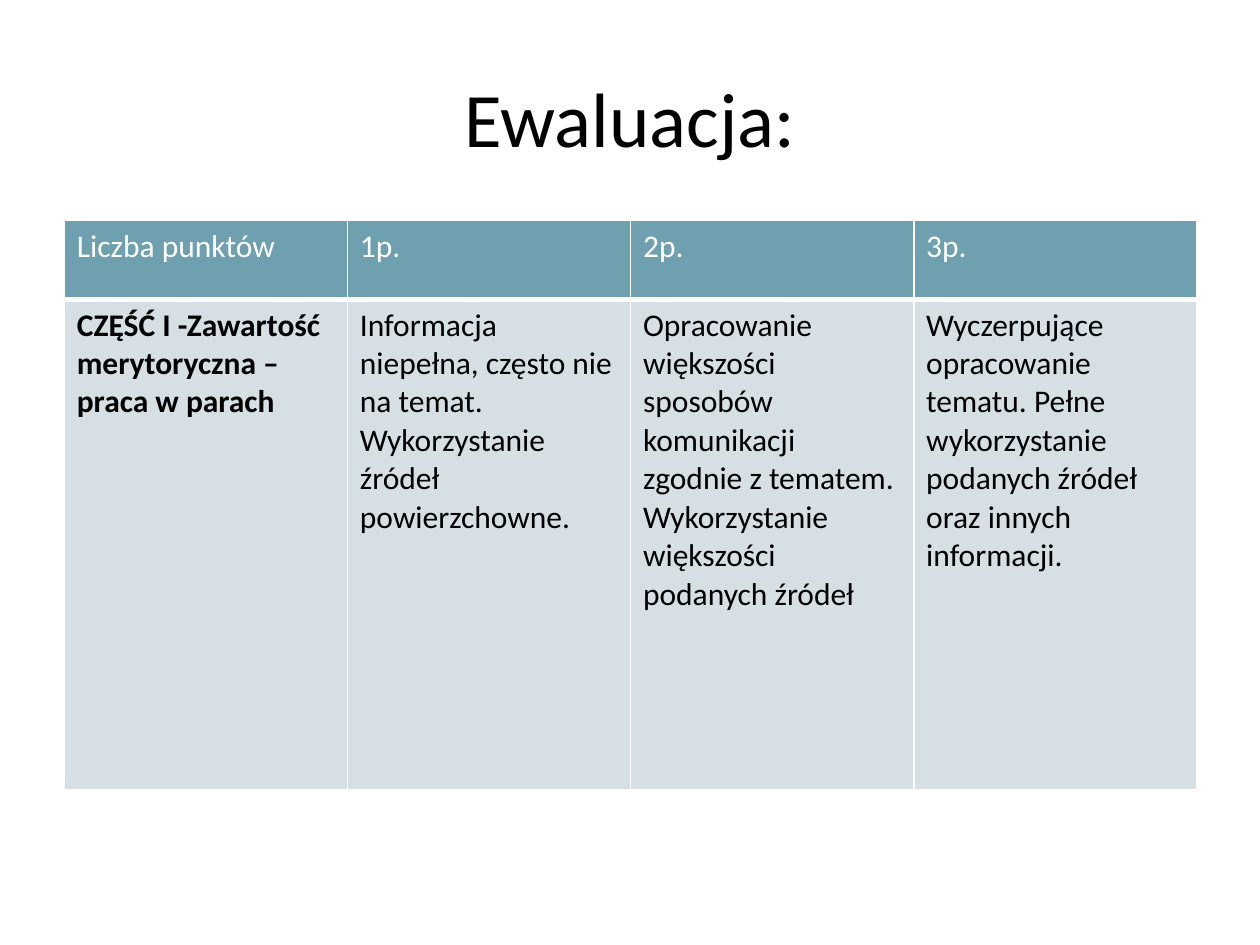
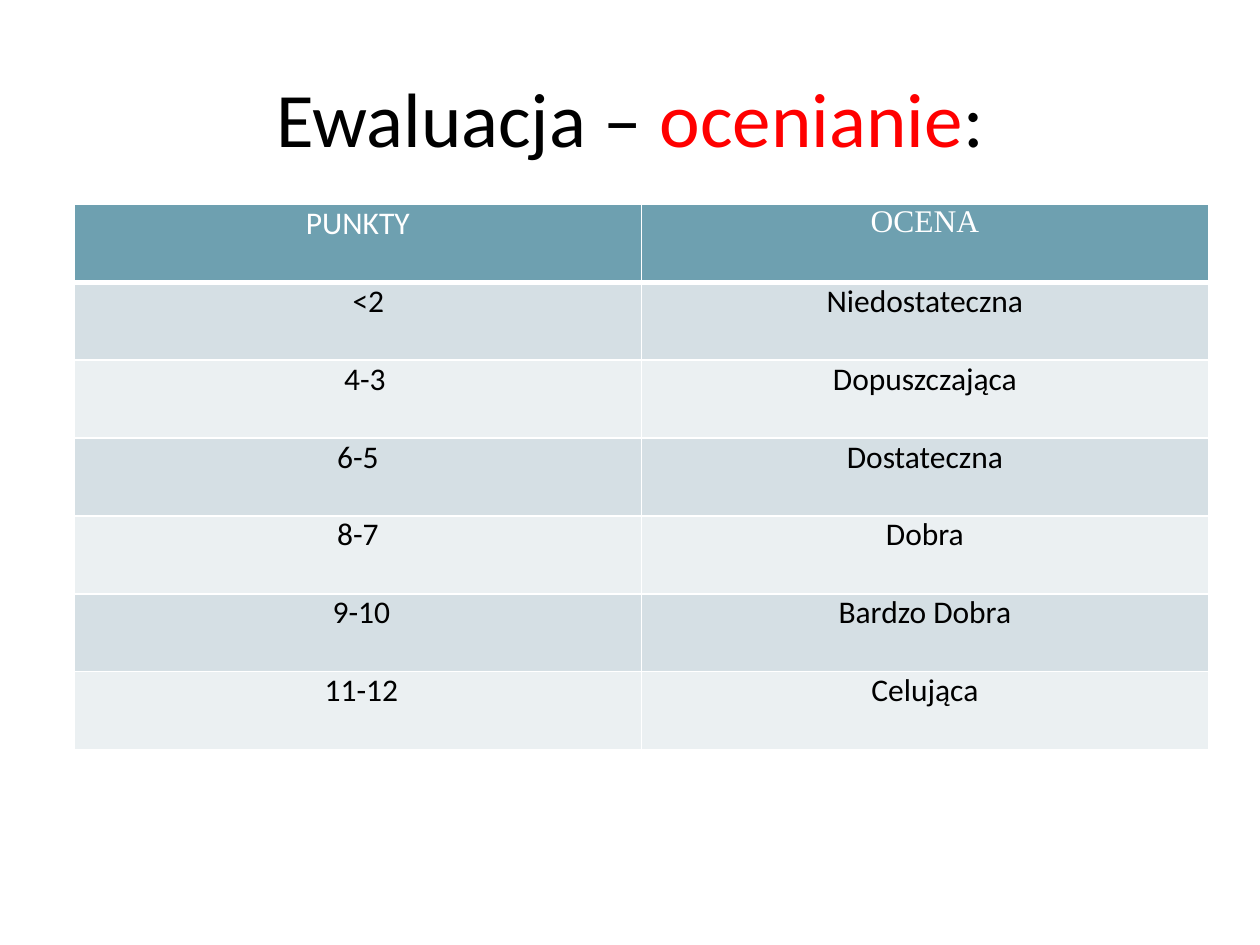
"""Build two evaluation slides, each a title above a banded table."""
from lxml import etree
from pptx import Presentation
from pptx.dml.color import RGBColor
from pptx.enum.text import MSO_ANCHOR, PP_ALIGN
from pptx.oxml.ns import qn
from pptx.util import Cm, Pt

LEFT, CENTER, MIDDLE = PP_ALIGN.LEFT, PP_ALIGN.CENTER, MSO_ANCHOR.MIDDLE
BLACK = RGBColor(0x00, 0x00, 0x00)
WHITE = RGBColor(0xFF, 0xFF, 0xFF)
RED = RGBColor(0xFF, 0x00, 0x00)
TEAL = RGBColor(0x6E, 0xA0, 0xB0)
BANDS = RGBColor(0xD5, 0xDF, 0xE4), RGBColor(0xEB, 0xF0, 0xF2)
SANS, SERIF = "Calibri", "Times New Roman"

CRITERIA = {
    "title": [("Ewaluacja:", BLACK)],
    "rows": [
        ("Liczba punktów", "1p.", "2p.", "3p."),
        ("CZĘŚĆ I -Zawartość merytoryczna –\npraca w parach",
         "Informacja niepełna, często nie na temat. Wykorzystanie źródeł powierzchowne.",
         "Opracowanie większości sposobów komunikacji zgodnie z tematem. "
         "Wykorzystanie większości podanych źródeł",
         "Wyczerpujące opracowanie tematu. Pełne wykorzystanie podanych źródeł "
         "oraz innych informacji."),
    ],
    "place": (1.3, 4.45, 22.83),
    "heights": [1.59, 9.89],
    "align": LEFT,
    "margins": (0.25, 0.13),
    "bold_cells": {(1, 0)},
}
GRADES = {
    "title": [("Ewaluacja – ", BLACK), ("ocenianie", RED), (":", BLACK)],
    "rows": [
        ("PUNKTY", "OCENA"),
        ("<2", "Niedostateczna"),
        ("4-3", "Dopuszczająca"),
        ("6-5", "Dostateczna"),
        ("8-7", "Dobra"),
        ("9-10", "Bardzo Dobra"),
        ("11-12", "Celująca"),
    ],
    "place": (1.5, 4.12, 22.86),
    "heights": [1.57] * 7,
    "align": CENTER,
    "margins": (0.18, 0),
    "serif_cells": {(0, 1)},
    "indents": {(1, 0): 0.42, (2, 0): 0.28, (5, 0): 0.14, (6, 0): 0.14},
}


def apply(target, values):
    for name, value in values.items():
        setattr(target, name, value)


def style_font(font, size, color, name=SANS, bold=False):
    apply(font, {"size": Pt(size), "name": name, "bold": bold})
    font.color.rgb = color


def add_title(page, parts):
    box = page.shapes.add_textbox(Cm(1.27), Cm(0.76), Cm(22.86), Cm(3.18))
    frame = box.text_frame
    apply(frame, {"word_wrap": True, "vertical_anchor": MIDDLE})
    para = frame.paragraphs[0]
    para.alignment = CENTER
    for text, color in parts:
        span = para.add_run()
        span.text = text
        style_font(span.font, 44, color)


def add_borders(cell, bottom):
    properties = cell._tc.get_or_add_tcPr()
    for side, width in (("L", 1), ("R", 1), ("T", 1), ("B", bottom)):
        line = etree.SubElement(properties, qn(f"a:ln{side}"), w=str(Pt(width)))
        fill = etree.SubElement(line, qn("a:solidFill"))
        etree.SubElement(fill, qn("a:srgbClr"), val=str(WHITE))


def fill_cell(cell, spot, text, content):
    header = spot[0] == 0
    side, edge = content["margins"]
    indent = content.get("indents", {}).get(spot, 0)
    apply(cell, {"text": text, "margin_left": Cm(side + indent), "margin_right": Cm(side),
                 "margin_top": Cm(edge), "margin_bottom": Cm(edge)})
    add_borders(cell, 3 if header else 1)
    cell.fill.solid()
    cell.fill.fore_color.rgb = TEAL if header else BANDS[(spot[0] - 1) % 2]
    name = SERIF if spot in content.get("serif_cells", ()) else SANS
    bold = spot in content.get("bold_cells", ())
    for para in cell.text_frame.paragraphs:
        para.alignment = content["align"]
        for span in para.runs:
            style_font(span.font, 18, WHITE if header else BLACK, name, bold)


def add_grid(page, content):
    rows, heights = content["rows"], content["heights"]
    left, top, width = content["place"]
    columns = len(rows[0])
    table = page.shapes.add_table(len(rows), columns, Cm(left), Cm(top),
                                  Cm(width), Cm(sum(heights))).table
    for column in table.columns:
        column.width = Cm(width / columns)
    for row, (texts, height) in enumerate(zip(rows, heights)):
        table.rows[row].height = Cm(height)
        for column, text in enumerate(texts):
            fill_cell(table.cell(row, column), (row, column), text, content)


def main():
    deck = Presentation()
    apply(deck, {"slide_width": Cm(25.4), "slide_height": Cm(19.05)})
    for content in (CRITERIA, GRADES):
        page = deck.slides.add_slide(deck.slide_layouts[6])
        add_title(page, content["title"])
        add_grid(page, content)
    deck.save("out.pptx")


if __name__ == "__main__":
    main()
